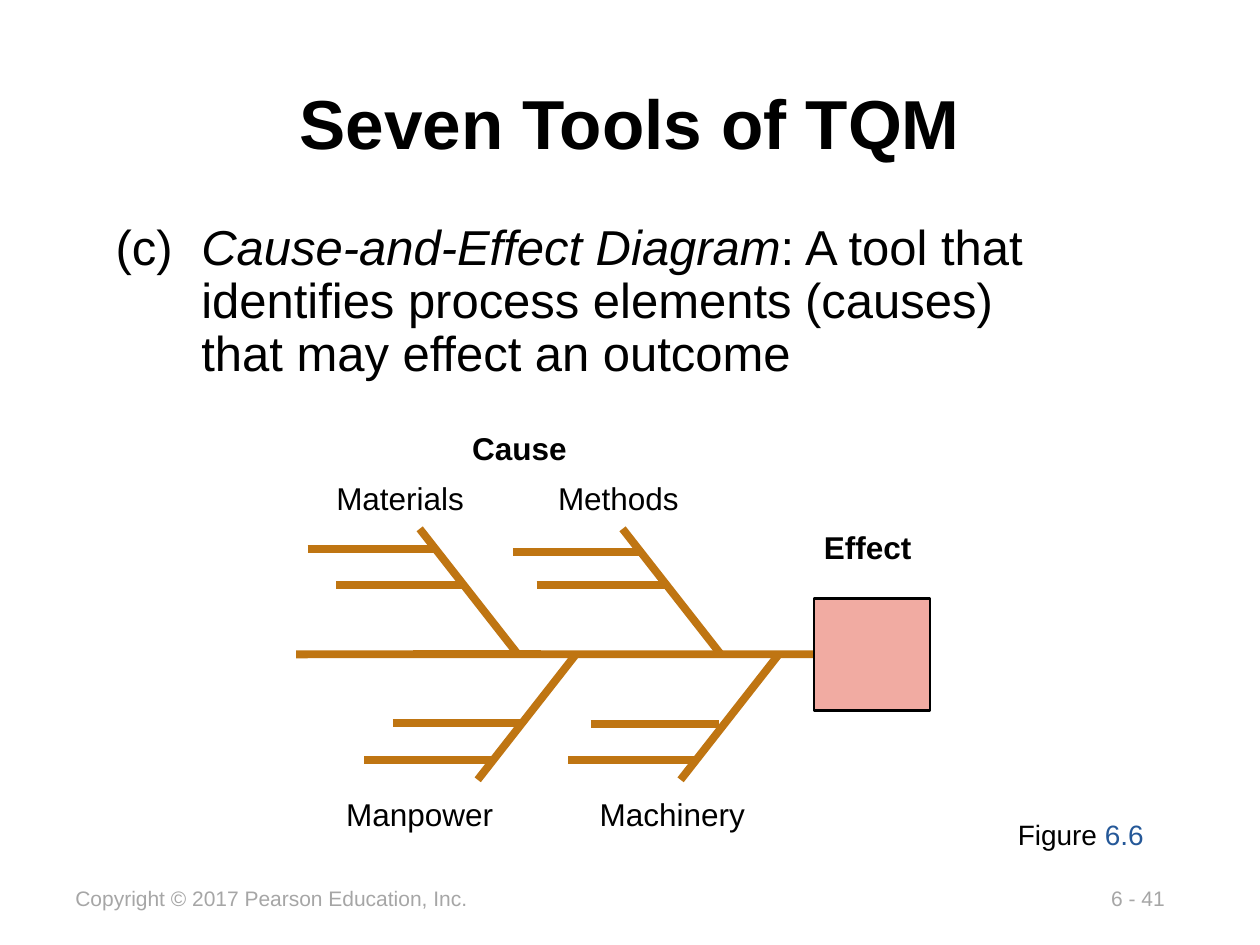
from lxml import etree
from pptx import Presentation
from pptx import util as u
from pptx.dml.color import RGBColor
from pptx.enum import shapes, text
from pptx.oxml.ns import qn

BLACK = RGBColor(0x00, 0x00, 0x00)
GRAY = RGBColor(0xA6, 0xA6, 0xA6)
BLUE = RGBColor(0x25, 0x58, 0x98)
BROWN = RGBColor(0xBF, 0x75, 0x12)
PINK = RGBColor(0xF1, 0xAB, 0xA2)


class Deck:
    font = "Arial"
    bone_width = u.Pt(4.5)

    def __init__(self):
        self.prs = Presentation()
        self.prs.slide_width = u.Cm(25.4)
        self.prs.slide_height = u.Cm(19.05)
        self.s = self.prs.slides.add_slide(self.prs.slide_layouts[6])

    def text(self, x, y, w, h, runs, size, color=BLACK, bold=False, wrap=False):
        sp = self.s.shapes.add_textbox(u.Cm(x), u.Cm(y), u.Cm(w), u.Cm(h))
        tf = sp.text_frame
        tf.word_wrap = wrap
        p = tf.paragraphs[0]
        for words in runs:
            p.add_run().text = words
        p.font.name = self.font
        p.font.size = u.Pt(size)
        p.font.bold = bold
        for r in p.runs:
            r.font.color.rgb = color
        return tf

    def label(self, x, y, w, words, bold=False):
        self.text(x, y, w, 1.02, [words], 18, bold=bold)

    def bone(self, x1, y1, x2, y2):
        c = self.s.shapes.add_connector(
            shapes.MSO_CONNECTOR.STRAIGHT, u.Cm(x1), u.Cm(y1), u.Cm(x2), u.Cm(y2))
        c.line.color.rgb = BROWN
        c.line.width = self.bone_width
        etree.SubElement(c._element.spPr, qn("a:effectLst"))
        return c

    def box(self, x, y, w, h):
        sp = self.s.shapes.add_shape(
            shapes.MSO_SHAPE.RECTANGLE, u.Cm(x), u.Cm(y), u.Cm(w), u.Cm(h))
        sp.shadow.inherit = False
        sp.fill.solid()
        sp.fill.fore_color.rgb = PINK
        sp.line.color.rgb = BLACK
        sp.line.width = u.Pt(1.5)
        return sp


def main():
    d = Deck()
    d.text(22.15, 17.73, 1.65, 0.76, ["6 - 41"], 12, GRAY)
    d.text(1.27, 17.73, 8.51, 0.76,
           ["Copyright © 2017 Pearson Education, Inc."], 12, GRAY)

    title = d.text(1.9, 1.42, 21.6, 2.06, ["Seven Tools of TQM"], 39.6,
                   bold=True, wrap=True)
    title.vertical_anchor = text.MSO_ANCHOR.MIDDLE
    title.paragraphs[0].alignment = text.PP_ALIGN.CENTER

    body = d.text(2.08, 4.37, 18.8, 3.5, [
        "(c)\t", "Cause-and-Effect Diagram",
        ": A tool that identifies process elements (causes) that may effect an outcome",
    ], 28, wrap=True)
    p = body.paragraphs[0]
    p.line_spacing = 0.9
    p.runs[1].font.italic = True
    pPr = p._p.get_or_add_pPr()
    pPr.set("marL", str(u.Cm(1.73)))
    pPr.set("indent", str(u.Cm(-1.73)))

    figure = d.text(20.27, 16.36, 3.18, 0.94, ["Figure ", "6.6"], 16)
    figure.paragraphs[0].runs[1].font.color.rgb = BLUE

    d.label(9.27, 8.53, 2.44, "Cause", bold=True)
    d.label(6.53, 9.53, 3.12, "Materials")
    d.label(11, 9.53, 2.97, "Methods")
    d.label(6.73, 15.9, 3.51, "Manpower")
    d.label(11.84, 15.9, 3.48, "Machinery")
    d.label(16.36, 10.52, 2.29, "Effect", bold=True)

    spine_y, rib_run, rib_rise, rib_gap = 13.19, 1.98, 2.53, 4.09
    spine = d.bone(5.97, spine_y, 16.41, spine_y)
    for x, rise in ((8.46, -rib_rise), (9.63, rib_rise)):
        for left in (x, x + rib_gap):
            d.bone(left, spine_y + rise, left + rib_run, spine_y)

    effect = d.box(16.41, 12.06, 2.34, 2.26)
    spine.end_connect(effect, 1)

    twig = 2.58
    for x, y in ((6.2, 11.07), (6.78, 11.79), (10.34, 11.12), (10.82, 11.79),
                 (8.33, spine_y), (7.92, 14.58), (7.34, 15.32),
                 (11.91, 14.6), (11.46, 15.32)):
        d.bone(x, y, x + twig, y)

    d.prs.save("out.pptx")


if __name__ == "__main__":
    main()
